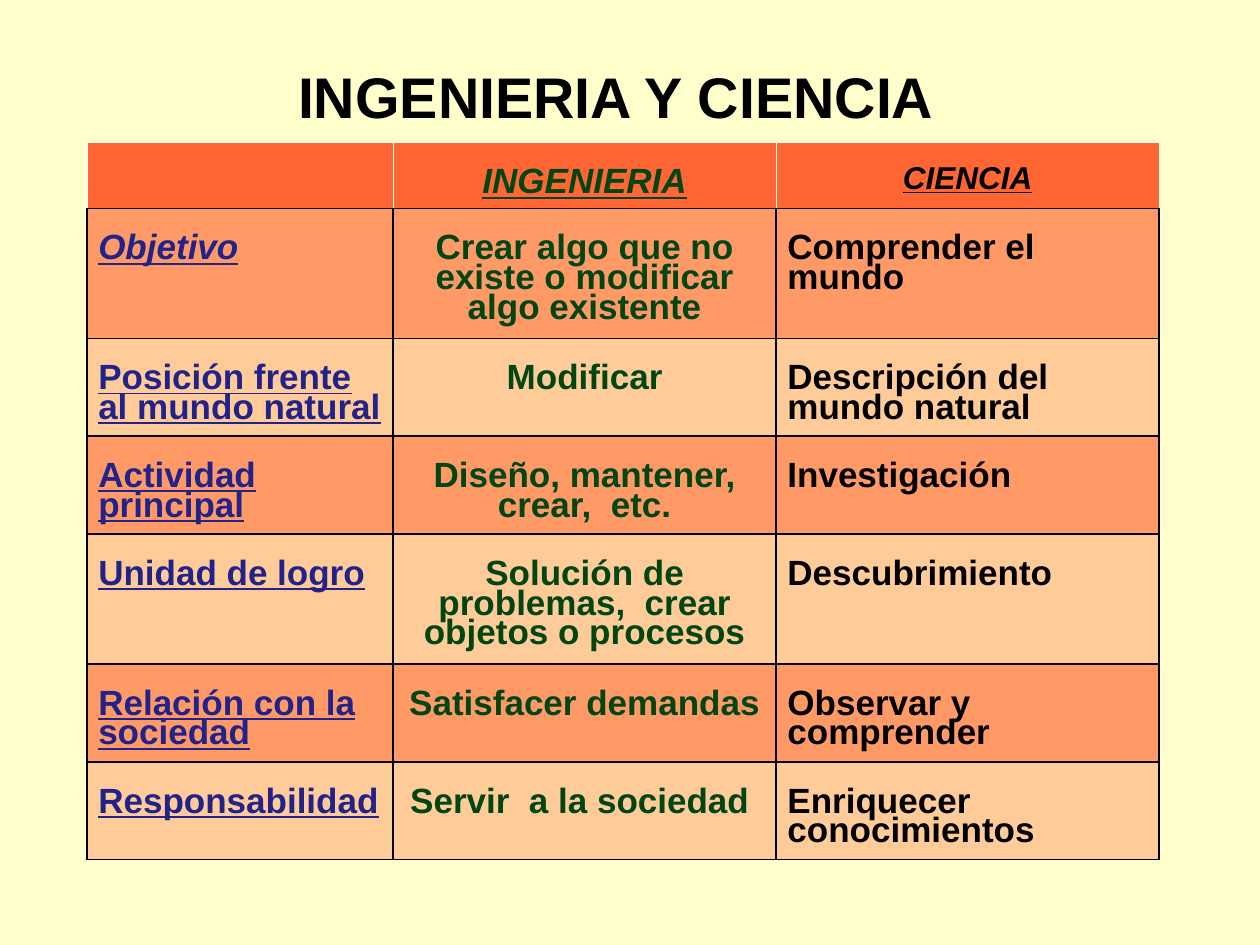
from lxml import etree
from pptx import Presentation
from pptx.dml.color import RGBColor
from pptx.enum.text import MSO_ANCHOR, PP_ALIGN
from pptx.oxml.ns import qn
from pptx.util import Inches, Pt

LEFT, CENTER = PP_ALIGN.LEFT, PP_ALIGN.CENTER
MIDDLE = MSO_ANCHOR.MIDDLE

CREAM = RGBColor(0xFF, 0xFF, 0xCC)
BLACK = RGBColor(0x00, 0x00, 0x00)
WHITE = RGBColor(0xFF, 0xFF, 0xFF)
GREEN = RGBColor(0x01, 0x45, 0x11)
BLUE = RGBColor(0x22, 0x22, 0x8B)
HEADER = RGBColor(0xFF, 0x66, 0x33)
BANDS = (RGBColor(0xFF, 0x99, 0x66), RGBColor(0xFF, 0xCC, 0x99))

COL_WIDTHS = (2.43, 3.04, 3.04)
ROW_HEIGHTS = (0.52, 1.02, 0.77, 0.77, 1.02, 0.77, 0.77)
COL_COLORS = (BLUE, GREEN, BLACK)
COL_ALIGNS = (LEFT, CENTER, LEFT)
ROWS = (
    ("", "INGENIERIA", "CIENCIA"),
    ("Objetivo", "Crear algo que no existe o modificar algo existente",
     "Comprender el mundo"),
    ("Posición frente al mundo natural", "Modificar",
     "Descripción del mundo natural"),
    ("Actividad principal", "Diseño, mantener, crear,  etc.", "Investigación"),
    ("Unidad de logro", "Solución de problemas,  crear objetos o procesos",
     "Descubrimiento"),
    ("Relación con la sociedad", "Satisfacer demandas",
     "Observar y comprender"),
    ("Responsabilidad", "Servir  a la sociedad ", "Enriquecer conocimientos"),
)


def write_text(p, text, size, color, align, spacing, italic=False, underline=False):
    p.alignment = align
    p.line_spacing = spacing
    r = p.add_run()
    r.text = text
    r.font.name = "Arial"
    r.font.size = Pt(size)
    r.font.bold = True
    r.font.italic = italic
    r.font.underline = underline
    r.font.color.rgb = color


def set_borders(cell, is_header):
    tcPr = cell._tc.get_or_add_tcPr()
    for i, side in enumerate(("L", "R", "T", "B")):
        light = is_header and side != "B"
        ln = etree.Element(qn(f"a:ln{side}"), w=str(Pt(0.11 if light else 0.91)))
        fill = etree.SubElement(ln, qn("a:solidFill"))
        etree.SubElement(fill, qn("a:srgbClr"), val=str(WHITE if light else BLACK))
        tcPr.insert(i, ln)


def add_title(slide, left, top, width, height):
    sp = slide.shapes.add_textbox(Inches(left), Inches(top), Inches(width), Inches(height))
    tf = sp.text_frame
    tf.word_wrap = True
    tf.vertical_anchor = MIDDLE
    tf.margin_left = tf.margin_right = tf.margin_bottom = 0
    tf.margin_top = Inches(0.04)
    write_text(tf.paragraphs[0], "INGENIERIA Y CIENCIA", 32.7, BLACK, CENTER, 0.93)


def add_comparison(slide, left, top, width, height):
    table = slide.shapes.add_table(
        len(ROWS), len(COL_WIDTHS),
        Inches(left), Inches(top), Inches(width), Inches(height)).table
    table.first_row = table.horz_banding = False
    for column, share in zip(table.columns, COL_WIDTHS):
        column.width = Inches(width * share / sum(COL_WIDTHS))
    for row, share in zip(table.rows, ROW_HEIGHTS):
        row.height = Inches(height * share / sum(ROW_HEIGHTS))
    for i, texts in enumerate(ROWS):
        is_header = i == 0
        for j, text in enumerate(texts):
            cell = table.cell(i, j)
            cell.fill.solid()
            cell.fill.fore_color.rgb = HEADER if is_header else BANDS[(i - 1) % 2]
            set_borders(cell, is_header)
            if not text:
                continue
            small = is_header and j == 2
            cell.margin_left = cell.margin_right = Inches(0.09)
            cell.margin_top = Inches(0.2 if small else 0.22)
            cell.margin_bottom = Inches(0.05)
            write_text(cell.text_frame.paragraphs[0], text, 18 if small else 20,
                       COL_COLORS[j], CENTER if is_header else COL_ALIGNS[j], 0.76,
                       italic=is_header or text == "Objetivo",
                       underline=is_header or j == 0)


def main():
    prs = Presentation()
    prs.slide_width, prs.slide_height = Inches(10), Inches(7.5)
    slide = prs.slides.add_slide(prs.slide_layouts[6])
    slide.background.fill.solid()
    slide.background.fill.fore_color.rgb = CREAM
    add_title(slide, 0.5, 0.14, 8.78, 1.25)
    add_comparison(slide, 0.69, 1.13, 8.51, 5.65)
    prs.save("out.pptx")


if __name__ == "__main__":
    main()
